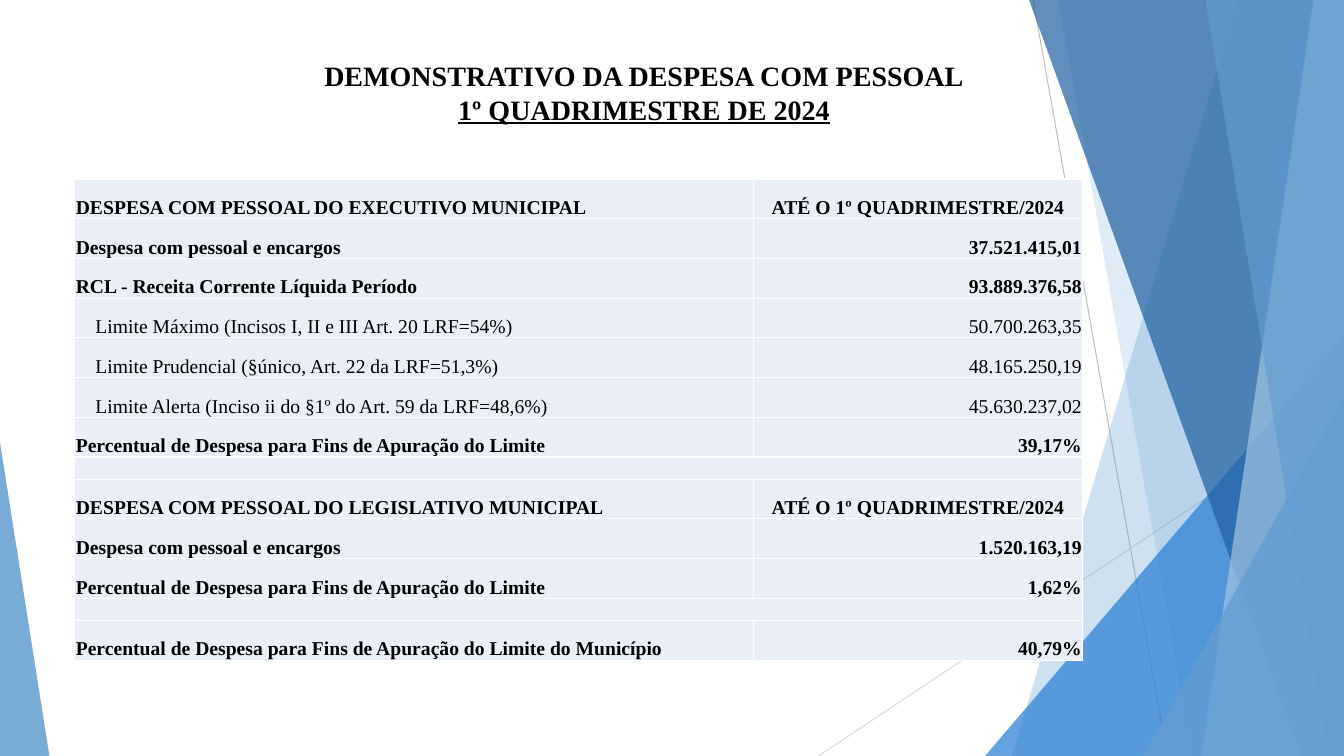
from lxml.etree import SubElement
from pptx import Presentation
from pptx.dml.color import RGBColor
from pptx.enum.shapes import MSO_CONNECTOR as Connector, MSO_SHAPE as Shape
from pptx.enum.text import MSO_ANCHOR as Anchor, PP_ALIGN as Align
from pptx.oxml.ns import qn
from pptx.util import Pt

WIDTH, HEIGHT = 960, 540
COLORS = {
    "text": "000000", "white": "FFFFFF", "cell": "EAEFF7",
    "line": "BFBFBF", "pale line": "D9D9D9",
    "sky": "629DD1", "blue": "297FD5", "navy": "1F5FA0", "ice": "A1C4E3",
}
FONT = "Times New Roman"
ROW_HEIGHT, SPACER_HEIGHT = 28.4, 15.8
COLUMN_WIDTHS = (484.5, 235.5)
PERIOD = "ATÉ O 1º QUADRIMESTRE/2024"
EXPENSE = "Despesa com pessoal e encargos"
SHARE = "Percentual de Despesa para Fins de Apuração do Limite"

# Label, value and row kind; None is a merged spacer row.
ROWS = [
    ("DESPESA COM PESSOAL DO EXECUTIVO MUNICIPAL", PERIOD, "header"),
    (EXPENSE, "37.521.415,01", "total"),
    ("RCL - Receita Corrente Líquida Período", "93.889.376,58", "total"),
    ("Limite Máximo (Incisos I, II e III Art. 20 LRF=54%)", "50.700.263,35", "limit"),
    ("Limite Prudencial (§único, Art. 22 da LRF=51,3%)", "48.165.250,19", "limit"),
    ("Limite Alerta (Inciso ii do §1º do Art. 59 da LRF=48,6%)", "45.630.237,02", "limit"),
    (SHARE, "39,17%", "total"),
    None,
    ("DESPESA COM PESSOAL DO LEGISLATIVO MUNICIPAL", PERIOD, "header"),
    (EXPENSE, "1.520.163,19", "total"),
    (SHARE, "1,62%", "total"),
    None,
    (SHARE + " do Município", "40,79%", "total"),
]


def rgb(name):
    return RGBColor.from_string(COLORS[name])


class SlideBuilder:
    def __init__(self, page):
        self.page = page
        self.shapes = page.shapes

    def line(self, start, end, color):
        line = self.shapes.add_connector(Connector.STRAIGHT, *map(Pt, start + end))
        line.line.color.rgb = rgb(color)
        line.line.width = Pt(0.75)
        SubElement(line._element.spPr, qn("a:effectLst"))

    def paint(self, shape, color, opacity):
        shape.shadow.inherit = False
        shape.fill.solid()
        shape.fill.fore_color.rgb = rgb(color)
        shape.line.fill.background()
        tint = shape._element.spPr.find(qn("a:solidFill"))[0]
        SubElement(tint, qn("a:alpha"), val=str(opacity * 1000))

    def panel(self, top_x, bottom_x, color, opacity):
        """Full-height panel with a slanted left edge, reaching the right of the page."""
        outline = self.shapes.build_freeform(Pt(top_x), 0)
        corners = ((WIDTH, 0), (WIDTH, HEIGHT), (bottom_x, HEIGHT))
        outline.add_line_segments([(Pt(x), Pt(y)) for x, y in corners], close=True)
        self.paint(outline.convert_to_shape(), color, opacity)

    def corner(self, left, top, width, apex, color, opacity):
        """Triangle standing on the bottom edge; apex is 0 for left, 1 for right."""
        box = self.shapes.add_shape(
            Shape.ISOSCELES_TRIANGLE, Pt(left), Pt(top), Pt(width), Pt(HEIGHT - top))
        box.adjustments[0] = apex
        self.paint(box, color, opacity)

    def span(self, para, text, size, bold=True, underline=False):
        span = para.add_run()
        span.text = text
        font = span.font
        font.name, font.size, font.bold = FONT, Pt(size), bold
        font.color.rgb = rgb("text")
        if underline:
            font.underline = True

    def title(self, first, second):
        box = self.shapes.add_textbox(Pt(121.7), Pt(36), Pt(676.8), Pt(103.7))
        frame = box.text_frame
        frame.word_wrap = True
        frame.margin_top = Pt(5.8)
        para = frame.paragraphs[0]
        para.alignment = Align.CENTER
        self.span(para, first, 20)
        para.add_line_break()
        self.span(para, second, 20, underline=True)

    def style_cell(self, cell):
        props = cell._tc.get_or_add_tcPr()
        for side in ("lnL", "lnR", "lnT", "lnB"):
            border = SubElement(props, qn("a:" + side), w=str(Pt(1)))
            SubElement(SubElement(border, qn("a:solidFill")),
                       qn("a:srgbClr"), val=COLORS["white"])
        cell.fill.solid()
        cell.fill.fore_color.rgb = rgb("cell")
        cell.vertical_anchor = Anchor.BOTTOM
        cell.margin_left = cell.margin_right = cell.margin_top = Pt(0.7)
        cell.margin_bottom = 0

    def table(self, rows):
        heights = [ROW_HEIGHT if row else SPACER_HEIGHT for row in rows]
        frame = self.shapes.add_table(
            len(rows), 2, Pt(53.5), Pt(127.8), Pt(sum(COLUMN_WIDTHS)), Pt(sum(heights)))
        table = frame.table
        table.first_row = table.horz_banding = False
        for column, width in zip(table.columns, COLUMN_WIDTHS):
            column.width = Pt(width)
        for index, (row, height) in enumerate(zip(rows, heights)):
            table.rows[index].height = Pt(height)
            label, value = cells = [table.cell(index, column) for column in range(2)]
            for cell in cells:
                self.style_cell(cell)
            if row is None:
                label.merge(value)
                for cell in cells:
                    SubElement(cell.text_frame.paragraphs[0]._p,
                               qn("a:endParaRPr"), sz="800")
                continue
            kind = row[2]
            if kind == "limit":
                label.margin_left = Pt(14.7)
            aligns = (Align.LEFT, Align.CENTER if kind == "header" else Align.RIGHT)
            for cell, text, align in zip(cells, row, aligns):
                para = cell.text_frame.paragraphs[0]
                para.alignment = align
                self.span(para, text, 14, bold=kind != "limit")


def main():
    deck = Presentation()
    deck.slide_width, deck.slide_height = Pt(WIDTH), Pt(HEIGHT)
    slide = SlideBuilder(deck.slides.add_slide(deck.slide_layouts[6]))

    slide.line((738, 0), (833.8, HEIGHT), "line")
    slide.line((WIDTH, 290.2), (584.6, HEIGHT), "pale line")
    slide.panel(884.2, 722.9, "sky", 30)
    slide.panel(756, 851.8, "sky", 20)
    slide.corner(703.7, 239.8, 256.3, 1, "blue", 72)
    slide.panel(735.1, 929.5, "navy", 70)
    slide.panel(938.2, 858.2, "ice", 70)
    slide.panel(861.1, 949, "sky", 65)
    slide.corner(816.7, 283, 143.3, 1, "sky", 80)
    slide.corner(0, 316.1, 35.3, 0, "sky", 85)

    slide.title("DEMONSTRATIVO DA DESPESA COM PESSOAL", "1º QUADRIMESTRE DE 2024")
    slide.table(ROWS)
    deck.save("out.pptx")


if __name__ == "__main__":
    main()
